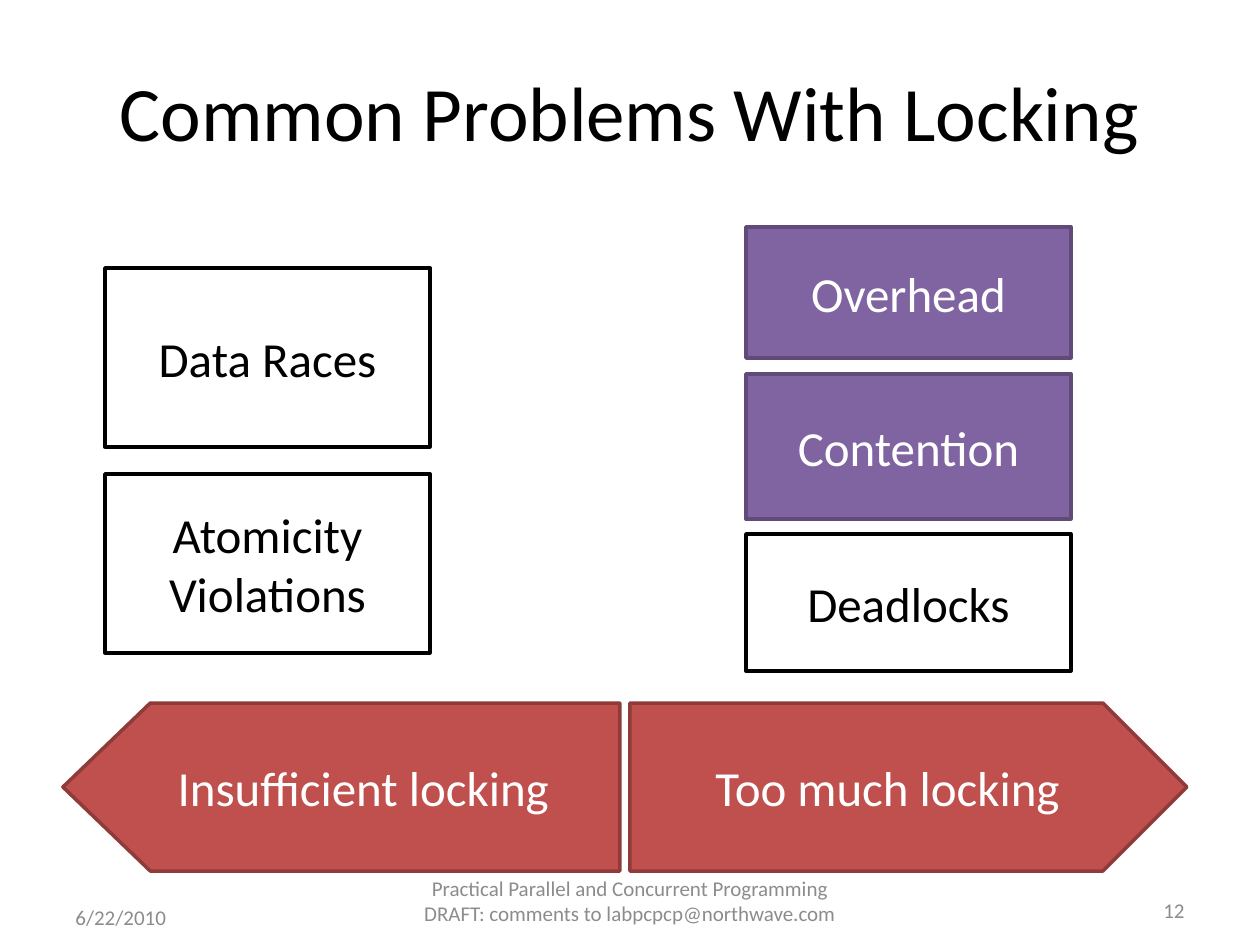
from pptx import Presentation
from pptx import util as u
from pptx.dml import color
from pptx.enum import shapes, text

PX = 914400 / 126
FONT = "Calibri"
C = {
    "black": "000000", "white": "FFFFFF", "grey": "8C8C8C",
    "purple": "8064A2", "purple_edge": "5F4A78",
    "red": "C0504D", "red_edge": "8E3B39",
}
ALIGN = text.PP_ALIGN
SHAPE = shapes.MSO_SHAPE
PLAIN = ("white", "black", "black")
PURPLE = ("purple", "purple_edge", "white")
RED = ("red", "red_edge", "white")


def px(*values):
    """Turn pixel lengths into EMU."""
    return [u.Emu(round(v * PX)) for v in values]


def rgb(name):
    """Look up a named colour."""
    return color.RGBColor.from_string(C[name])


def write(sp, words, *, size=28, ink="black", align=ALIGN.CENTER):
    """Put one formatted, vertically centred paragraph in a shape."""
    tf = sp.text_frame
    tf.word_wrap = True
    tf.vertical_anchor = text.MSO_ANCHOR.MIDDLE
    p = tf.paragraphs[0]
    p.alignment = align
    r = p.add_run()
    r.text = words
    r.font.name = FONT
    r.font.size = u.Pt(size)
    r.font.color.rgb = rgb(ink)


def add_label(s, box, words, **fmt):
    """Add a text box."""
    write(s.shapes.add_textbox(*px(*box)), words, **fmt)


def add_block(s, box, words, style, kind=SHAPE.RECTANGLE):
    """Add a filled and outlined shape with a caption."""
    fill, edge, ink = style
    sp = s.shapes.add_shape(kind, *px(*box))
    sp.shadow.inherit = False
    sp.fill.solid()
    sp.fill.fore_color.rgb = rgb(fill)
    sp.line.color.rgb = rgb(edge)
    sp.line.width = u.Pt(2)
    write(sp, words, ink=ink)
    return sp


def add_arrow(s, left, words, *, adj=0.5, flip=False):
    """Add a red pentagon arrow pointing right, or left when flipped."""
    sp = add_block(s, (left, 703, 557, 168), words, RED, SHAPE.PENTAGON)
    sp.adjustments[0] = adj
    if flip:
        sp._element.spPr.xfrm.set("flipH", "1")


def add_column(s, left, blocks):
    """Add a column of equally wide blocks."""
    for top, height, words, style in blocks:
        add_block(s, (left, top, 325, height), words, style)


def main():
    """Build the slide and save it."""
    prs = Presentation()
    prs.slide_width, prs.slide_height = px(1260, 945)
    s = prs.slides.add_slide(prs.slide_layouts[6])

    add_label(s, (63, 32, 1134, 157), "Common Problems With Locking", size=44)
    add_column(s, 105, [
        (268, 179, "Data Races", PLAIN),
        (474, 179, "Atomicity Violations", PLAIN),
    ])
    add_column(s, 746, [
        (227, 131, "Overhead", PURPLE),
        (374, 145, "Contention", PURPLE),
        (534, 137, "Deadlocks", PLAIN),
    ])
    add_arrow(s, 630, "Too much locking")
    add_arrow(s, 63, "Insufficient locking", adj=0.52, flip=True)

    small = {"size": 12, "ink": "grey"}
    add_label(s, (63, 892, 294, 50), "6/22/2010", align=ALIGN.LEFT, **small)
    add_label(s, (399, 876, 462, 50),
              "Practical Parallel and Concurrent Programming "
              "DRAFT: comments to labpcpcp@northwave.com", **small)
    add_label(s, (903, 885, 294, 50), "12", align=ALIGN.RIGHT, **small)
    prs.save("out.pptx")


if __name__ == "__main__":
    main()
